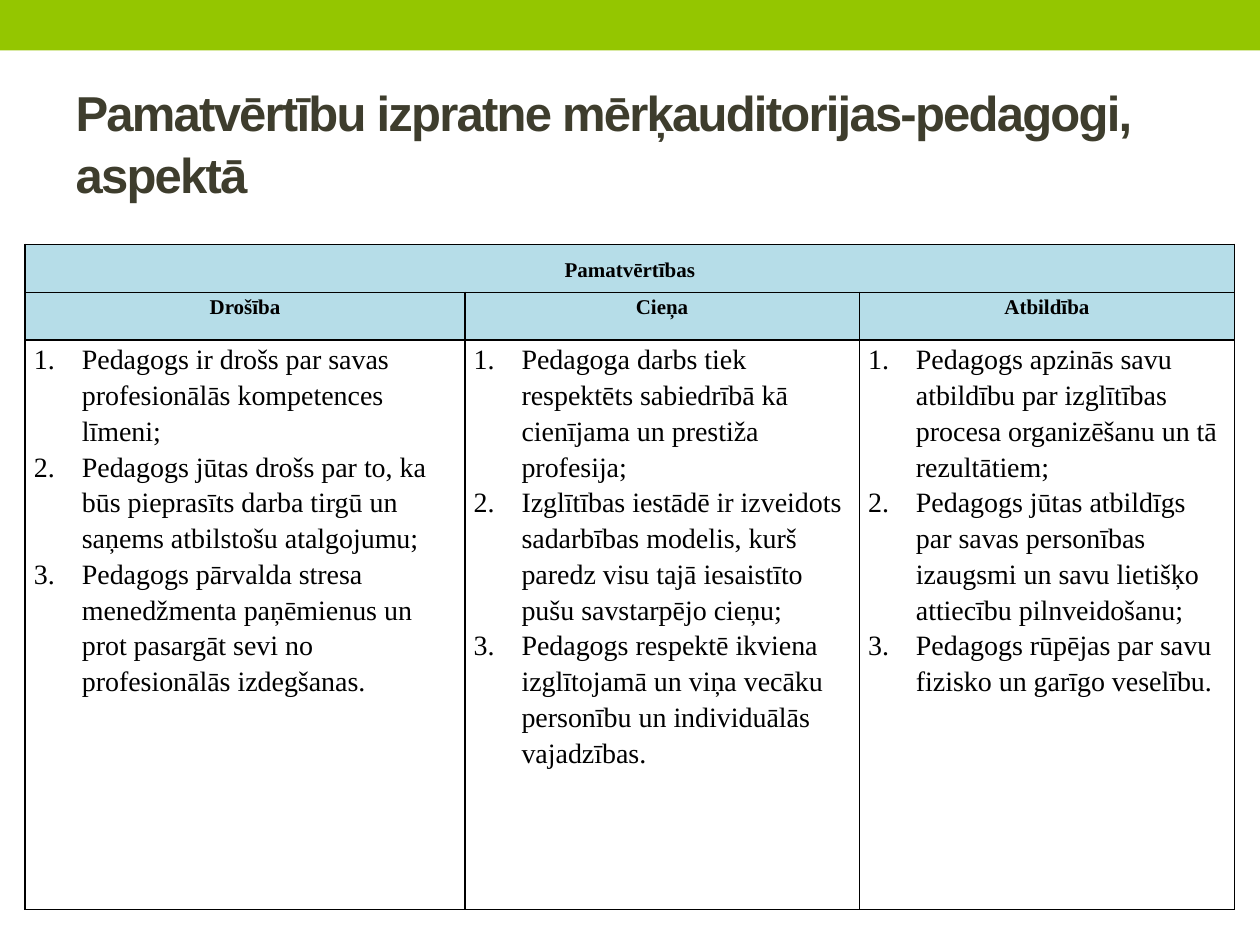
from dataclasses import dataclass

from lxml.etree import SubElement
from pptx import Presentation
from pptx.dml.color import RGBColor
from pptx.enum.shapes import MSO_SHAPE
from pptx.enum.text import MSO_ANCHOR, MSO_AUTO_SIZE, PP_ALIGN
from pptx.oxml.ns import qn
from pptx.util import Inches, Pt


@dataclass(frozen=True)
class Theme:
    """Colours, fonts and type sizes of the slide."""

    band: RGBColor = RGBColor.from_string("94C600")
    title: RGBColor = RGBColor.from_string("3E3D2D")
    header: RGBColor = RGBColor.from_string("B6DDE8")
    ink: RGBColor = RGBColor.from_string("000000")
    title_font: str = "Arial"
    table_font: str = "Times New Roman"
    title_size: int = 28
    header_size: int = 12
    body_size: int = 16
    line_spacing: float = 1.15


THEME = Theme()
SLIDE_WIDTH, SLIDE_HEIGHT = Inches(10), Inches(7.5)
COLUMN_WIDTHS = (3.49, 3.13, 2.98)
ROW_HEIGHTS = (0.38, 0.38, 4.52)
TITLE = "Pamatvērtību izpratne mērķauditorijas-pedagogi, aspektā"
TABLE_HEADING = "Pamatvērtības"
VALUES = {
    "Drošība": (
        "Pedagogs ir drošs par savas profesionālās kompetences līmeni;",
        "Pedagogs jūtas drošs par to, ka būs pieprasīts darba tirgū un saņems atbilstošu atalgojumu;",
        "Pedagogs pārvalda stresa menedžmenta paņēmienus un prot pasargāt sevi no profesionālās izdegšanas.",
    ),
    "Cieņa": (
        "Pedagoga darbs tiek respektēts sabiedrībā kā cienījama un prestiža profesija;",
        "Izglītības iestādē ir izveidots sadarbības modelis, kurš paredz visu tajā iesaistīto pušu savstarpējo cieņu;",
        "Pedagogs respektē ikviena izglītojamā un viņa vecāku personību un individuālās vajadzības.",
    ),
    "Atbildība": (
        "Pedagogs apzinās savu atbildību par izglītības procesa organizēšanu un tā rezultātiem;",
        "Pedagogs jūtas atbildīgs par savas personības izaugsmi un savu lietišķo attiecību pilnveidošanu;",
        "Pedagogs rūpējas par savu fizisko un garīgo veselību.",
    ),
}


def add_run(paragraph, wording, font_name, size, color, bold):
    """Append one formatted run and return it."""
    run = paragraph.add_run()
    run.text = wording
    run.font.name = font_name
    run.font.size = Pt(size)
    run.font.color.rgb = color
    run.font.bold = bold
    return run


def add_band(slide):
    """Draw the coloured band along the top edge."""
    band = slide.shapes.add_shape(MSO_SHAPE.RECTANGLE, 0, 0, SLIDE_WIDTH, Inches(0.4))
    band.shadow.inherit = False
    band.fill.solid()
    band.fill.fore_color.rgb = THEME.band
    band.line.fill.background()


def set_title(slide):
    """Place the title and write its tightly spaced wording."""
    title = slide.shapes.title
    title.left, title.top = Inches(0.5), Inches(0.58)
    title.width, title.height = Inches(9), Inches(1.08)
    frame = title.text_frame
    frame.word_wrap = True
    frame.auto_size = MSO_AUTO_SIZE.NONE
    frame.vertical_anchor = MSO_ANCHOR.MIDDLE
    paragraph = frame.paragraphs[0]
    paragraph.alignment = PP_ALIGN.LEFT
    paragraph.line_spacing = 1.05
    run = add_run(paragraph, TITLE, THEME.title_font, THEME.title_size, THEME.title, True)
    run.font._element.set("spc", "-100")


def add_borders(cell):
    """Give the cell a thin line on all four sides."""
    properties = cell._tc.get_or_add_tcPr()
    for side in ("lnL", "lnR", "lnT", "lnB"):
        line = SubElement(properties, qn(f"a:{side}"), w=str(Pt(1)))
        fill = SubElement(line, qn("a:solidFill"))
        SubElement(fill, qn("a:srgbClr"), val=str(THEME.ink))


def format_cell(cell):
    """Set the borders and margins shared by all cells."""
    add_borders(cell)
    cell.margin_left = cell.margin_right = Inches(0.07)
    cell.margin_top = cell.margin_bottom = 0


def write_header(cell, wording, anchor=MSO_ANCHOR.TOP):
    """Fill a header cell with a centred bold label."""
    cell.fill.solid()
    cell.fill.fore_color.rgb = THEME.header
    cell.vertical_anchor = anchor
    paragraph = cell.text_frame.paragraphs[0]
    paragraph.alignment = PP_ALIGN.CENTER
    paragraph.line_spacing = THEME.line_spacing
    add_run(paragraph, wording, THEME.table_font, THEME.header_size, THEME.ink, True)


def write_numbered_list(cell, statements):
    """Write the statements as a numbered list with a hanging indent."""
    cell.fill.background()
    frame = cell.text_frame
    for index, statement in enumerate(statements):
        paragraph = frame.add_paragraph() if index else frame.paragraphs[0]
        paragraph.line_spacing = THEME.line_spacing
        properties = paragraph._p.get_or_add_pPr()
        properties.set("marL", str(Inches(0.38)))
        properties.set("indent", str(-Inches(0.38)))
        SubElement(properties, qn("a:buFont"), typeface="+mj-lt")
        SubElement(properties, qn("a:buAutoNum"), type="arabicPeriod")
        add_run(paragraph, statement, THEME.table_font, THEME.body_size, THEME.ink, False)


def add_values_table(slide):
    """Build the table with one column for each core value."""
    table = slide.shapes.add_table(
        len(ROW_HEIGHTS), len(COLUMN_WIDTHS), Inches(0.2), Inches(1.94),
        Inches(sum(COLUMN_WIDTHS)), Inches(sum(ROW_HEIGHTS)),
    ).table
    table.first_row = table.horz_banding = False
    for column, width in zip(table.columns, COLUMN_WIDTHS):
        column.width = Inches(width)
    for row, height in zip(table.rows, ROW_HEIGHTS):
        row.height = Inches(height)
    for cell in table.iter_cells():
        format_cell(cell)
    heading = table.cell(0, 0)
    heading.merge(table.cell(0, len(COLUMN_WIDTHS) - 1))
    write_header(heading, TABLE_HEADING, MSO_ANCHOR.MIDDLE)
    for column, (value, statements) in enumerate(VALUES.items()):
        write_header(table.cell(1, column), value)
        write_numbered_list(table.cell(2, column), statements)


def main():
    """Build the slide and save it."""
    presentation = Presentation()
    presentation.slide_width, presentation.slide_height = SLIDE_WIDTH, SLIDE_HEIGHT
    slide = presentation.slides.add_slide(presentation.slide_layouts.get_by_name("Title Only"))
    add_band(slide)
    set_title(slide)
    add_values_table(slide)
    presentation.save("out.pptx")


if __name__ == "__main__":
    main()
